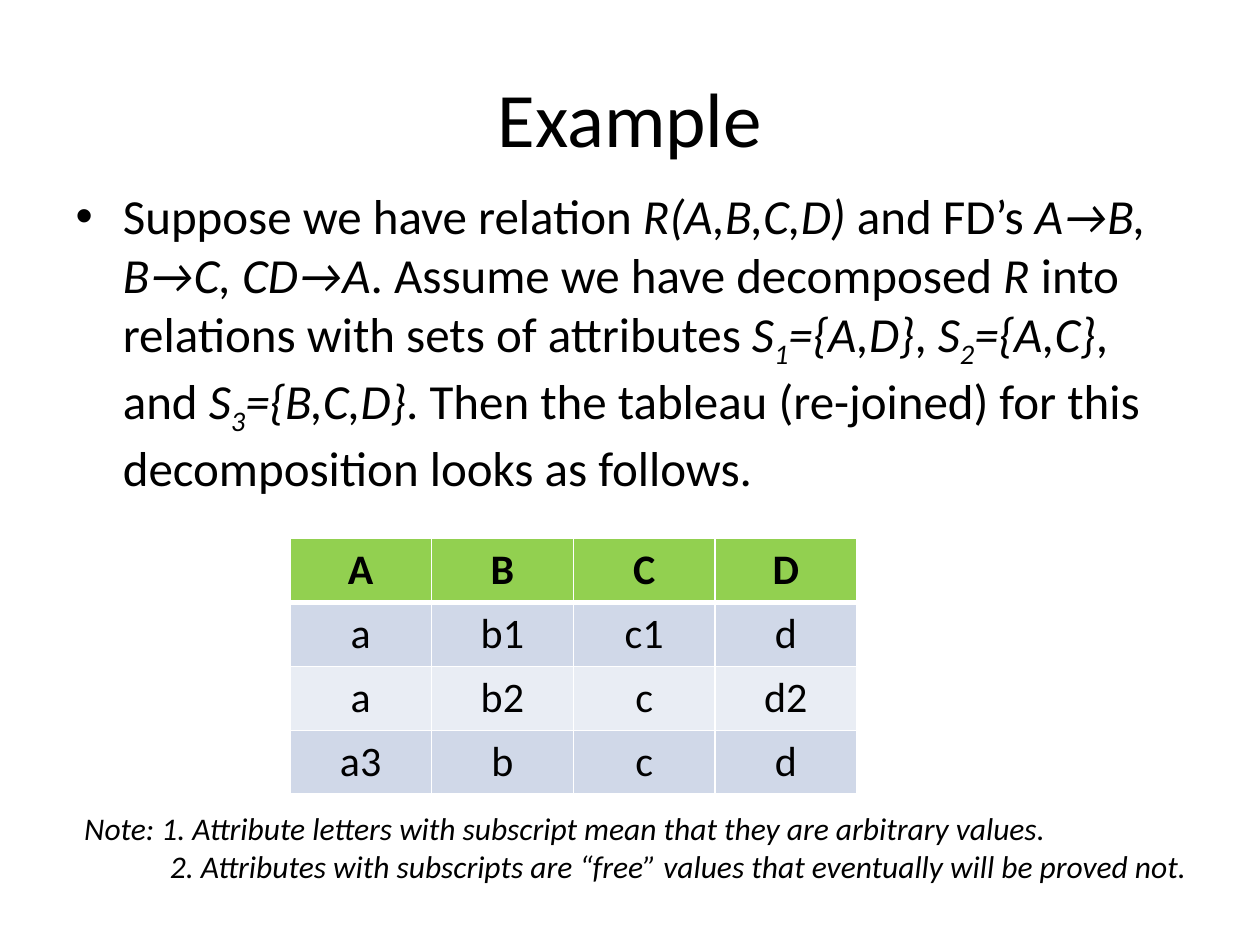
from dataclasses import dataclass

from lxml.etree import SubElement
from pptx import Presentation
from pptx.dml.color import RGBColor
from pptx.enum.text import MSO_ANCHOR as Anchor, MSO_AUTO_SIZE as AutoSize, PP_ALIGN as Align
from pptx.oxml.ns import qn
from pptx.util import Inches, Pt


@dataclass(frozen=True)
class Theme:
    font: str = "Calibri"
    ink: str = "000000"
    border: str = "FFFFFF"
    header: str = "92D050"
    bands: tuple = ("D0D8E8", "E9EDF4")
    title_size: int = 44
    body_size: int = 28
    table_size: int = 24
    note_size: int = 18


PLAIN, ITALIC, SUBSCRIPT = "plain", "italic", "subscript"


def scheme(number, attributes):
    """Runs for a numbered relation scheme such as S1={A,D}."""
    return [("S", ITALIC), (number, SUBSCRIPT), (f"={{{attributes}}}", ITALIC)]


BODY_RUNS = [
    ("Suppose we have relation ", PLAIN),
    ("R(A,B,C,D) ", ITALIC),
    ("and FD’s ", PLAIN),
    ("A→B, B→C, CD→A", ITALIC),
    (". Assume we have decomposed ", PLAIN),
    ("R", ITALIC),
    (" into relations with sets of attributes ", PLAIN),
    *scheme("1", "A,D"),
    (", ", PLAIN),
    *scheme("2", "A,C"),
    (", and ", PLAIN),
    *scheme("3", "B,C,D"),
    (". Then the tableau (re-joined) for this decomposition looks as follows.", PLAIN),
]

TABLEAU = [
    ["A", "B", "C", "D"],
    ["a", "b1", "c1", "d"],
    ["a", "b2", "c", "d2"],
    ["a3", "b", "c", "d"],
]

# Each note line with its left indent in inches
NOTES = [
    ("Note: 1. Attribute letters with subscript mean that they are arbitrary values.", 0),
    ("2. Attributes with subscripts are “free” values that eventually will be proved not.", 0.68),
]


class SlideBuilder:
    def __init__(self, presentation, theme):
        self.theme = theme
        self.width = presentation.slide_width
        self.height = presentation.slide_height
        self.slide = presentation.slides.add_slide(presentation.slide_layouts[1])

    def box(self, left, top, width, height):
        """Turn shares of the slide's size into lengths."""
        return (int(left * self.width), int(top * self.height),
                int(width * self.width), int(height * self.height))

    def place(self, shape, shares):
        shape.left, shape.top, shape.width, shape.height = self.box(*shares)

    def style(self, run, size, bold=False, italic=False):
        font = run.font
        font.name, font.size = self.theme.font, Pt(size)
        font.bold, font.italic = bold, italic
        font.color.rgb = RGBColor.from_string(self.theme.ink)

    def title(self, text, shares):
        shape = self.slide.shapes.title
        self.place(shape, shares)
        shape.text_frame.text = text
        shape.text_frame.vertical_anchor = Anchor.MIDDLE
        paragraph = shape.text_frame.paragraphs[0]
        paragraph.alignment = Align.CENTER
        self.style(paragraph.runs[0], self.theme.title_size)

    def body(self, runs, shares):
        shape = self.slide.placeholders[1]
        self.place(shape, shares)
        paragraph = shape.text_frame.paragraphs[0]
        for text, kind in runs:
            run = paragraph.add_run()
            run.text = text
            self.style(run, self.theme.body_size, italic=kind != PLAIN)
            if kind == SUBSCRIPT:
                run.font._element.set("baseline", "-25000")

    def border(self, cell, side, points):
        line = SubElement(cell._tc.get_or_add_tcPr(), qn(f"a:ln{side}"), w=str(Pt(points)))
        fill = SubElement(line, qn("a:solidFill"))
        SubElement(fill, qn("a:srgbClr"), val=self.theme.border)

    def cell(self, cell, text, row):
        is_header = row == 0
        thick_side = {0: "B", 1: "T"}.get(row)
        for side in "LRTB":
            self.border(cell, side, 3 if side == thick_side else 1)
        color = self.theme.header if is_header else self.theme.bands[(row - 1) % 2]
        cell.fill.solid()
        cell.fill.fore_color.rgb = RGBColor.from_string(color)
        cell.text_frame.text = text
        paragraph = cell.text_frame.paragraphs[0]
        paragraph.alignment = Align.CENTER
        self.style(paragraph.runs[0], self.theme.table_size, bold=is_header)

    def table(self, rows, shares):
        frame = self.slide.shapes.add_table(len(rows), len(rows[0]), *self.box(*shares))
        for row, texts in enumerate(rows):
            for column, text in enumerate(texts):
                self.cell(frame.table.cell(row, column), text, row)

    def note(self, lines, shares):
        text_frame = self.slide.shapes.add_textbox(*self.box(*shares)).text_frame
        text_frame.word_wrap = False
        text_frame.auto_size = AutoSize.SHAPE_TO_FIT_TEXT
        text_frame.text = "\n".join(text for text, _ in lines)
        for paragraph, (_, indent) in zip(text_frame.paragraphs, lines):
            paragraph._p.get_or_add_pPr().set("marL", str(Inches(indent)))
            self.style(paragraph.runs[0], self.theme.note_size, italic=True)


def main():
    presentation = Presentation()
    presentation.slide_width, presentation.slide_height = Inches(10), Inches(7.5)
    builder = SlideBuilder(presentation, Theme())

    # Heading and problem statement
    builder.title("Example", (0.05, 0.04, 0.9, 1 / 6))
    builder.body(BODY_RUNS, (0.05, 0.19, 0.9, 0.66))

    # Tableau and the notes below it
    builder.table(TABLEAU, (0.23, 0.57, 0.45, 0.27))
    builder.note(NOTES, (0.057, 0.85, 0.905, 0.09))

    presentation.save("out.pptx")


if __name__ == "__main__":
    main()
